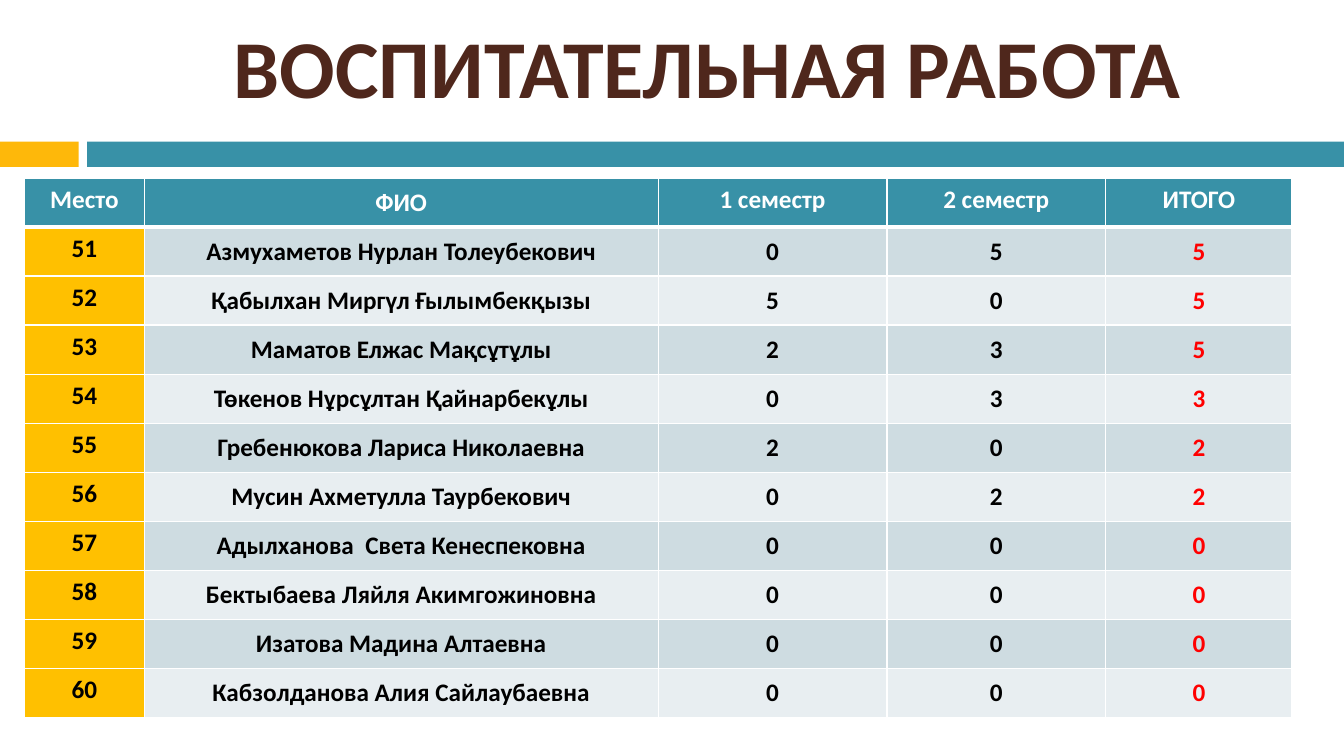
from lxml.etree import SubElement as add_child
from pptx import Presentation
from pptx.dml.color import RGBColor
from pptx.enum.shapes import MSO_SHAPE as Shape
from pptx.enum.text import MSO_ANCHOR as Anchor, MSO_AUTO_SIZE as AutoSize, PP_ALIGN as Align
from pptx.oxml.ns import qn
from pptx.util import Inches, Pt

WHITE, BLACK, RED = "FFFFFF", "000000", "FF0000"
TEAL, AMBER, GOLD, BROWN = "3891A7", "FEB80A", "FFC000", "4F271C"
BANDS = ("CEDCE1", "E8EEF1")
HEADINGS = ("Место", "ФИО", "1 семестр", "2 семестр", "ИТОГО")
COLUMN_SHARES = (8.91, 38.25, 17.01, 16.29, 13.86)
FIRST_PLACE = 51
RESULTS = (
    ("Азмухаметов Нурлан Толеубекович", 0, 5),
    ("Қабылхан Миргүл Ғылымбекқызы", 5, 0),
    ("Маматов Елжас Мақсұтұлы", 2, 3),
    ("Төкенов Нұрсұлтан Қайнарбекұлы", 0, 3),
    ("Гребенюкова Лариса Николаевна", 2, 0),
    ("Мусин Ахметулла Таурбекович", 0, 2),
    ("Адылханова  Света Кенеспековна", 0, 0),
    ("Бектыбаева Ляйля Акимгожиновна", 0, 0),
    ("Изатова Мадина Алтаевна", 0, 0),
    ("Кабзолданова Алия Сайлаубаевна", 0, 0),
)


def color(code):
    """Turn a hex string into a colour."""
    return RGBColor.from_string(code)


class RatingPage:
    """Hold the deck, its page and style; lengths are percent of the page."""

    font_name = "Calibri"

    def __init__(self, width, height):
        """Open a deck with one title-only page."""
        self.deck = Presentation()
        self.deck.slide_width, self.deck.slide_height = Inches(width), Inches(height)
        self.page = self.deck.slides.add_slide(self.deck.slide_layouts[5])

    def across(self, share):
        """Convert a percent of the page width."""
        return round(self.deck.slide_width * share / 100)

    def down(self, share):
        """Convert a percent of the page height."""
        return round(self.deck.slide_height * share / 100)

    def place(self, left, top, width, height):
        """Convert a box given in percent."""
        return self.across(left), self.down(top), self.across(width), self.down(height)

    def label(self, frame, text, size, ink):
        """Set one bold centred paragraph."""
        frame.text = text
        para = frame.paragraphs[0]
        para.alignment = Align.CENTER
        para.font.name, para.font.size, para.font.bold = self.font_name, Pt(size), True
        para.font.color.rgb = color(ink)

    def title(self, text, box, size, ink):
        """Place and format the title."""
        holder = self.page.shapes.title
        holder.left, holder.top, holder.width, holder.height = self.place(*box)
        frame = holder.text_frame
        frame.word_wrap, frame.auto_size = True, AutoSize.NONE
        frame.vertical_anchor = Anchor.MIDDLE
        self.label(frame, text, size, ink)

    def bar(self, box, paint):
        """Draw a plain filled rectangle."""
        bar = self.page.shapes.add_shape(Shape.RECTANGLE, *self.place(*box))
        bar.shadow.inherit = False
        bar.fill.solid()
        bar.fill.fore_color.rgb = color(paint)
        bar.line.fill.background()

    def border(self, cell, side, width):
        """Draw one white cell border."""
        props = cell._tc.get_or_add_tcPr()
        line = add_child(props, qn(f"a:ln{side}"), w=str(Pt(width)))
        paint = add_child(line, qn("a:solidFill"))
        add_child(paint, qn("a:srgbClr"), val=WHITE)

    def cell(self, cell, text, row, column):
        """Fill and format one cell by its row and column."""
        header, place = row == 0, column == 0
        for side in "LRTB":
            heavy = (row, side) in ((0, "B"), (1, "T"))
            self.border(cell, side, 3 if heavy else 1)
        cell.fill.solid()
        band = GOLD if place else BANDS[(row - 1) % 2]
        cell.fill.fore_color.rgb = color(TEAL if header else band)
        if not header and not place:
            cell.margin_left = cell.margin_right = cell.margin_top = cell.margin_bottom = 0
        top = place or (header and column != 1)
        cell.vertical_anchor = Anchor.TOP if top else Anchor.MIDDLE
        ink = WHITE if header else RED if column == len(HEADINGS) - 1 else BLACK
        self.label(cell.text_frame, text, 15, ink)

    def table(self, rows, left, top, column_shares, row_share):
        """Draw the rating table."""
        box = self.place(left, top, sum(column_shares), row_share * len(rows))
        table = self.page.shapes.add_table(len(rows), len(column_shares), *box).table
        for column, share in zip(table.columns, column_shares):
            column.width = self.across(share)
        for row, values in enumerate(rows):
            table.rows[row].height = self.down(row_share)
            for column, value in enumerate(values):
                self.cell(table.cell(row, column), str(value), row, column)


def main():
    """Build and save the rating page."""
    rating = RatingPage(11.11, 6.25)
    rating.bar((0, 18.72, 5.85, 3.36), AMBER)
    rating.bar((6.48, 18.72, 93.52, 3.36), TEAL)
    rating.title("ВОСПИТАТЕЛЬНАЯ РАБОТА", (8.01, 0.64, 89.2, 16), 48.9, BROWN)
    rows = [HEADINGS] + [
        (place, name, first, second, first + second)
        for place, (name, first, second) in enumerate(RESULTS, FIRST_PLACE)
    ]
    rating.table(rows, 1.82, 23.55, COLUMN_SHARES, 6.49)
    rating.deck.save("out.pptx")


if __name__ == "__main__":
    main()
